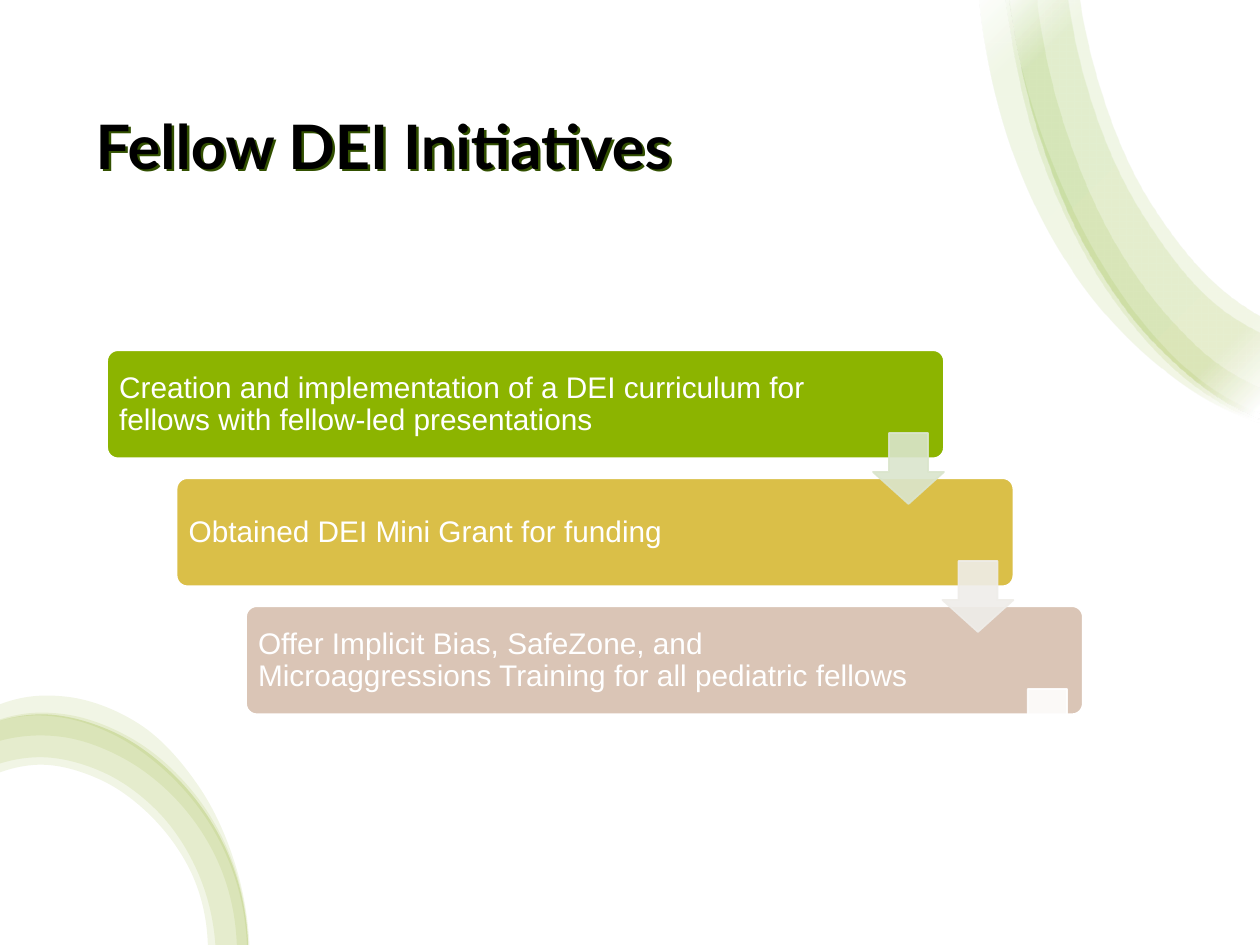
import dataclasses
import math

import lxml.etree
import pptx
import pptx.dml.color
import pptx.enum.shapes
import pptx.enum.text
import pptx.oxml.ns
import pptx.util

Cm = pptx.util.Cm
Pt = pptx.util.Pt
Preset = pptx.enum.shapes.MSO_SHAPE
qn = pptx.oxml.ns.qn


@dataclasses.dataclass(frozen=True)
class Theme:
    """Colours, fonts and type sizes of the slide."""
    heading_font: str = "Lato"
    body_font: str = "Arial"
    heading_size: int = 35
    body_size: int = 17
    ink: str = "000000"
    paper: str = "FFFFFF"
    heading_shadow: str = "325000"
    swoosh: str = "7EA300"
    swoosh_stops: tuple = ((2, "FFFFFF"), (16, "7EA300"), (85, "68A500"), (100, "FFFFFF"))
    swoosh_alpha: int = 10
    arrow_alpha: int = 90


THEME = Theme()
GRID_CM = 2.54

STEPS = (
    ("Creation and implementation of a DEI curriculum for fellows with fellow-led presentations",
     "8CB400", "DAE5CC", 2.6),
    ("Obtained DEI Mini Grant for funding", "DABF48", "EFEDE9", 3.07),
    ("Offer Implicit Bias, SafeZone, and Microaggressions Training for all pediatric fellows",
     "DAC5B6", "FFFFFF", 3.07),
)

TOP_OUTER = ((10, 3.32), (9.82, 3.24), (9.18, 2.74), (8.64, 2), (8.25, 1.07), (8.02, 0.04), (8, -0.09))
TOP_SWOOSH = (
    (((10, 3.35), (9.62, 3.19), (9.16, 2.87), (8.74, 2.45), (8.37, 1.92), (8.08, 1.31),
      (7.81, 0.26), (7.77, -0.09)),
     ((8.01, -0.09), (8.11, 0.52), (8.3, 1.15), (8.55, 1.73), (8.86, 2.27), (9.22, 2.73),
      (9.65, 3.1), (10, 3.28))),
    (TOP_OUTER, ((8.56, -0.09), (8.69, 0.55), (9.15, 1.64), (9.8, 2.38), (10, 2.51))),
    (((10, 3.33), (9.82, 3.27), (9.59, 3.14), (8.8, 2.33), (8.49, 1.79), (8.24, 1.19),
      (8.01, 0.2), (7.97, -0.09)),
     ((8.22, -0.09), (8.3, 0.44), (8.46, 1.04), (8.96, 2.11), (9.3, 2.55), (9.68, 2.9), (10, 3.08))),
    (TOP_OUTER, ((8.47, -0.09), (8.6, 0.59), (9.08, 1.72), (9.76, 2.5), (10, 2.64))),
)

BOTTOM_OUTER = ((1.97, 7.5), (1.77, 6.69), (1.39, 6.16), (0.88, 5.8), (0.3, 5.67), (0, 5.72))
BOTTOM_SWOOSH = (
    (BOTTOM_OUTER, ((0, 6.13), (0.3, 6.07), (0.8, 6.19), (1.24, 6.52), (1.55, 7), (1.65, 7.5))),
    (BOTTOM_OUTER, ((0, 6.06), (0.3, 6.01), (0.82, 6.13), (1.28, 6.47), (1.59, 6.97), (1.71, 7.5))),
    (((1.97, 7.5), (1.94, 7.19), (1.85, 6.85), (1.52, 6.27), (1.06, 5.87), (0.52, 5.67),
      (0.24, 5.66), (0, 5.71)),
     ((0, 5.88), (0.24, 5.84), (0.5, 5.85), (1, 6.03), (1.44, 6.39), (1.76, 6.91), (1.88, 7.5))),
    (((1.98, 7.5), (1.87, 6.87), (1.57, 6.23), (1.11, 5.75), (0.53, 5.53), (0.23, 5.53), (0, 5.59)),
     ((0, 5.72), (0.24, 5.68), (0.52, 5.7), (0.92, 5.84), (1.28, 6.09), (1.69, 6.58),
      (1.89, 7.05), (1.96, 7.5))),
)


def rgb(code):
    """Return the colour for a hex code."""
    return pptx.dml.color.RGBColor.from_string(code)


def add_child(parent, tag, **attributes):
    """Append a DrawingML element and return it."""
    texts = {key: str(value) for key, value in attributes.items()}
    return lxml.etree.SubElement(parent, qn(tag), texts)


def set_alpha(shape, percent):
    """Make every solid colour of the shape partly transparent."""
    for colour in shape._element.spPr.iter(qn("a:srgbClr")):
        add_child(colour, "a:alpha", val=percent * 1000)


def curve_handles(knots):
    """Return the two control points of each curve between neighbouring knots."""
    lengths = [math.dist(a, b) for a, b in zip(knots, knots[1:])]
    slopes = [((b[0] - a[0]) / size, (b[1] - a[1]) / size)
              for a, b, size in zip(knots, knots[1:], lengths)]
    tangents = [tuple((p * after + q * before) / (before + after) for p, q in zip(s, t))
                for s, t, before, after in zip(slopes, slopes[1:], lengths, lengths[1:])]
    first = tuple(2 * p - q for p, q in zip(slopes[0], tangents[0]))
    last = tuple(2 * p - q for p, q in zip(slopes[-1], tangents[-1]))
    tangents = [first, *tangents, last]
    return [(tuple(p + t * size / 3 for p, t in zip(a, leaving)),
             tuple(p - t * size / 3 for p, t in zip(b, arriving)))
            for a, b, leaving, arriving, size
            in zip(knots, knots[1:], tangents, tangents[1:], lengths)]


def add_band(slide, outer, inner, fading):
    """Draw one translucent band between two curved edges."""
    outer, inner = ([(Cm(x * GRID_CM), Cm(y * GRID_CM)) for x, y in edge] for edge in (outer, inner))
    builder = slide.shapes.build_freeform(*outer[0])
    builder.add_line_segments(outer[1:] + inner)
    band = builder.convert_to_shape()
    handles = curve_handles(outer) + [()] + curve_handles(inner)
    for segment, controls in zip(list(band._element.iter(qn("a:lnTo"))), handles):
        if controls:
            segment.tag = qn("a:cubicBezTo")
        for index, (x, y) in enumerate(controls):
            control = add_child(segment, "a:pt", x=round(x - band.left), y=round(y - band.top))
            segment.insert(index, control)
    band.shadow.inherit = False
    band.line.fill.background()
    if fading:
        band.fill.gradient()
        band.fill.gradient_angle = 135
        stops = band._element.spPr.find(qn("a:gradFill")).find(qn("a:gsLst"))
        for stop in list(stops):
            stops.remove(stop)
        for position, code in THEME.swoosh_stops:
            stop = add_child(stops, "a:gs", pos=position * 1000)
            add_child(stop, "a:srgbClr", val=code)
    else:
        band.fill.solid()
        band.fill.fore_color.rgb = rgb(THEME.swoosh)
    set_alpha(band, THEME.swoosh_alpha)


def write(shape, text, *, font, size, color, bold=False, spacing=1.0, insets=(0.25, 0.13, 0.25, 0.13)):
    """Write left-aligned, vertically centred text in a shape."""
    frame = shape.text_frame
    frame.word_wrap = True
    frame.vertical_anchor = pptx.enum.text.MSO_ANCHOR.MIDDLE
    frame.margin_left, frame.margin_top, frame.margin_right, frame.margin_bottom = map(Cm, insets)
    paragraph = frame.paragraphs[0]
    paragraph.alignment = pptx.enum.text.PP_ALIGN.LEFT
    paragraph.line_spacing = spacing
    run = paragraph.add_run()
    run.text = text
    run.font.name = font
    run.font.size = Pt(size)
    run.font.bold = bold
    run.font.color.rgb = rgb(color)


def add_heading(slide, text):
    """Add the slide heading with its shadow."""
    heading = slide.shapes.add_textbox(Cm(1.68), Cm(1.27), Cm(22.05), Cm(3.3))
    write(heading, text, font=THEME.heading_font, size=THEME.heading_size,
          color=THEME.ink, bold=True)
    effects = add_child(heading._element.spPr, "a:effectLst")
    shadow = add_child(effects, "a:outerShdw", dist=Pt(2), dir=2700000, algn="tl", rotWithShape=0)
    add_child(shadow, "a:srgbClr", val=THEME.heading_shadow)


def add_preset(slide, preset, left, top, width, height, fill, line=None, adjustments=()):
    """Add a filled preset shape, placed in centimetres."""
    shape = slide.shapes.add_shape(preset, Cm(left), Cm(top), Cm(width), Cm(height))
    for index, value in enumerate(adjustments):
        shape.adjustments[index] = value
    shape.shadow.inherit = False
    shape.fill.solid()
    shape.fill.fore_color.rgb = rgb(fill)
    if line:
        shape.line.color.rgb = rgb(line)
        shape.line.width = Pt(1)
    else:
        shape.line.fill.background()
    return shape


def add_staircase(slide):
    """Add the descending steps with a blank last one, then the arrows between them."""
    across, down = 1.4, 2.58
    for index, (text, fill, _, right_inset) in enumerate((*STEPS, ("", THEME.paper, "", 0))):
        step = add_preset(slide, Preset.ROUNDED_RECTANGLE, 2.16 + index * across,
                          7.06 + index * down, 16.87, 2.18, fill, THEME.paper, (0.1,))
        if text:
            write(step, text, font=THEME.body_font, size=THEME.body_size, color=THEME.paper,
                  spacing=0.9, insets=(0.18, 0.18, right_inset, 0.15))
    for index, (_, _, tint, _) in enumerate(STEPS):
        arrow = add_preset(slide, Preset.DOWN_ARROW, 17.6 + index * across,
                           8.73 + index * down, 1.43, 1.43, tint, tint, (0.55, 0.45))
        set_alpha(arrow, THEME.arrow_alpha)


def main():
    """Build the slide and save it."""
    deck = pptx.Presentation()
    deck.slide_width, deck.slide_height = Cm(25.4), Cm(19.05)
    slide = deck.slides.add_slide(deck.slide_layouts[6])
    add_preset(slide, Preset.RECTANGLE, 0, 0, 25.4, 19.05, THEME.paper)
    for swoosh, fading in ((TOP_SWOOSH, True), (BOTTOM_SWOOSH, False)):
        for outer, inner in swoosh:
            add_band(slide, outer, inner, fading)
    add_heading(slide, "Fellow DEI Initiatives")
    add_staircase(slide)
    deck.save("out.pptx")


if __name__ == "__main__":
    main()
